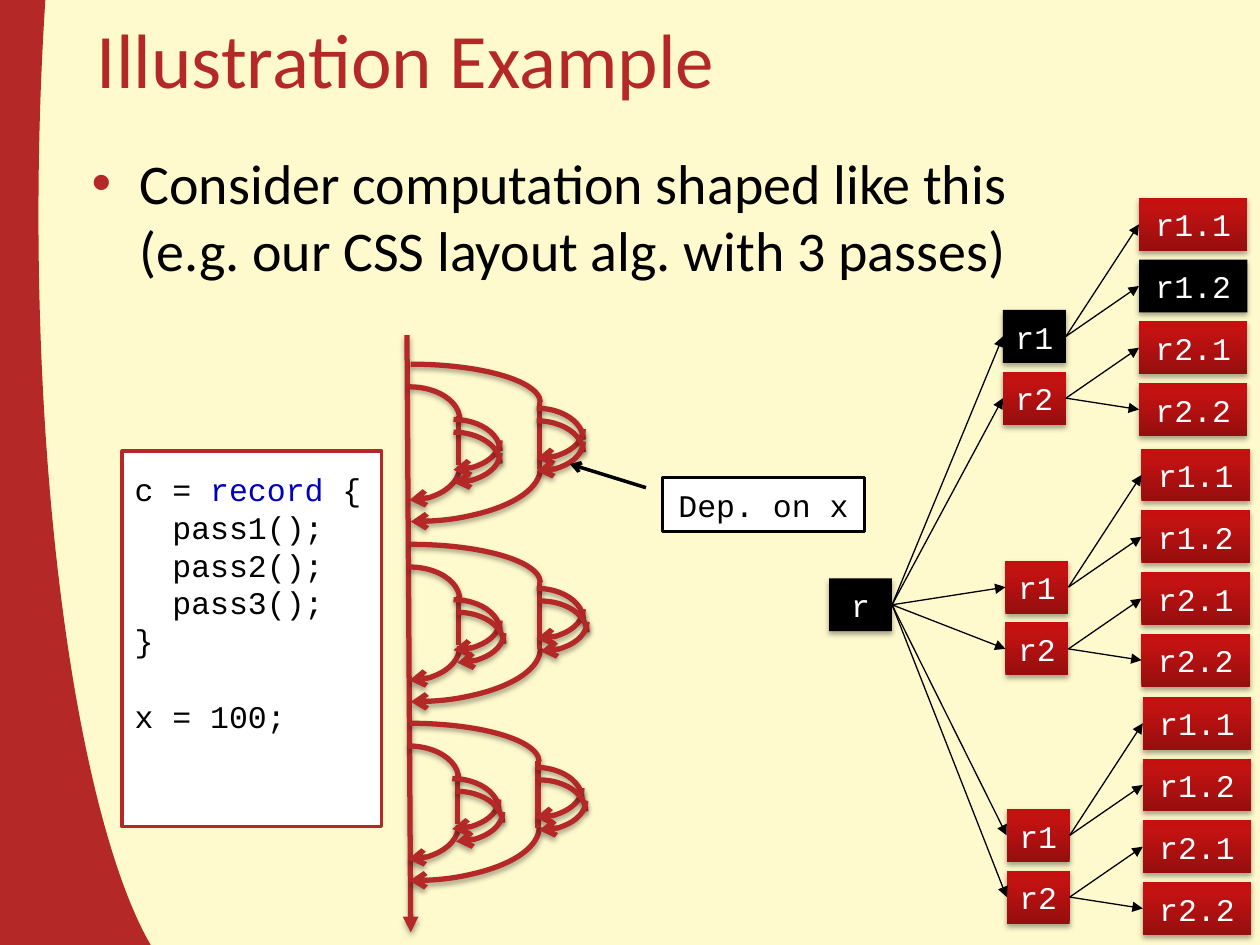
from lxml import etree
from pptx import Presentation
from pptx.dml.color import RGBColor
from pptx.enum.shapes import MSO_CONNECTOR, MSO_SHAPE
from pptx.enum.text import MSO_ANCHOR, PP_ALIGN
from pptx.oxml.ns import qn
from pptx.util import Inches, Pt

ARC, RECTANGLE, CALLOUT = MSO_SHAPE.ARC, MSO_SHAPE.RECTANGLE, MSO_SHAPE.LINE_CALLOUT_1
STRAIGHT = MSO_CONNECTOR.STRAIGHT
TOP, MIDDLE = MSO_ANCHOR.TOP, MSO_ANCHOR.MIDDLE
LEFT, CENTER = PP_ALIGN.LEFT, PP_ALIGN.CENTER

RED, BLACK, WHITE, CREAM, BLUE = "B42828", "000000", "FFFFFF", "FFFACD", "0000BF"
RED_STOPS = [(0, "960E0E"), (80, "C31212"), (100, "C70F0F")]
SANS, MONO = "Calibri", "Courier New"

NODE_HEIGHT, BRANCH_WIDTH, LEAF_WIDTH = 0.42, 0.5, 0.86
LEAF_OFFSET, LEAF_RISE, NODE_STEP = 1.08, 0.89, 0.49


def color(value):
    return RGBColor.from_string(value)


def add_part(parent, tag, **attributes):
    part = etree.SubElement(parent, qn(tag))
    for name, value in attributes.items():
        part.set(name, str(value))
    return part


def set_effects(shape, shadowed):
    effects = add_part(shape.element.spPr, "a:effectLst")
    if shadowed:
        shadow = add_part(effects, "a:outerShdw", blurRad=Pt(3.1), dist=Pt(1.8),
                          dir=5400000, rotWithShape=0)
        add_part(add_part(shadow, "a:srgbClr", val=BLACK), "a:alpha", val=35000)


def style_line(shape, line_color, width, arrow=None, shadowed=False):
    shape.line.color.rgb = color(line_color)
    shape.line.width = Pt(width)
    if arrow:
        tag, kind = arrow
        add_part(shape.line._get_or_add_ln(), tag, type=kind)
    set_effects(shape, shadowed)


def add_box(shapes, kind, box, fill=None):
    shape = shapes.add_shape(kind, *map(Inches, box))
    if fill:
        shape.fill.solid()
        shape.fill.fore_color.rgb = color(fill)
    else:
        shape.fill.background()
    return shape


def add_line(shapes, start, end, line_color, width, arrow=None, shadowed=False):
    line = shapes.add_connector(STRAIGHT, *map(Inches, start + end))
    style_line(line, line_color, width, arrow, shadowed)


def add_span(para, text, font, size, text_color):
    span = para.add_run()
    span.text = text
    span.font.name = font
    span.font.size = Pt(size)
    span.font.color.rgb = color(text_color)


def add_label(shape, text, text_color):
    frame = shape.text_frame
    frame.vertical_anchor = MIDDLE
    frame.word_wrap = False
    para = frame.paragraphs[0]
    para.alignment = CENTER
    add_span(para, text, MONO, 18, text_color)


def add_edge_band(page, box):
    band = add_box(page.shapes, ARC, box)
    band.adjustments[0] = 177.665
    band.adjustments[1] = 55.34
    band.element.spPr.get_or_add_xfrm().set("flipH", "1")
    style_line(band, RED, 80)


def add_title(page, box):
    frame = page.shapes.add_textbox(*map(Inches, box)).text_frame
    frame.word_wrap = True
    frame.vertical_anchor = MIDDLE
    add_span(frame.paragraphs[0], "Illustration Example", SANS, 44, RED)


def add_body(page, box):
    frame = page.shapes.add_textbox(*map(Inches, box)).text_frame
    frame.word_wrap = True
    para = frame.paragraphs[0]
    add_span(para, "Consider computation shaped like this", SANS, 32, BLACK)
    para.add_line_break()
    add_span(para, "(e.g. our CSS layout alg. with 3 passes)", SANS, 32, BLACK)
    props = para._p.get_or_add_pPr()
    props.set("marL", str(Inches(0.38)))
    props.set("indent", str(-Inches(0.38)))
    add_part(add_part(props, "a:buClr"), "a:srgbClr", val=RED)
    add_part(props, "a:buFont", typeface="Arial")
    add_part(props, "a:buChar", char="•")


def add_code(page, box):
    shape = add_box(page.shapes, RECTANGLE, box, WHITE)
    style_line(shape, RED, 2)
    frame = shape.text_frame
    frame.vertical_anchor = TOP
    frame.margin_top = Inches(0.15)
    lines = [
        (0, 0, [("c = ", BLACK), ("record", BLUE), (" {", BLACK)]),
        (0.3, 0, [("pass1();", BLACK)]),
        (0.3, 0, [("pass2();", BLACK)]),
        (0.3, 0, [("pass3();", BLACK)]),
        (0, 0, [("}", BLACK)]),
        (0, 21.5, [("x = 100;", BLACK)]),
    ]
    for index, (indent, gap, spans) in enumerate(lines):
        para = frame.add_paragraph() if index else frame.paragraphs[0]
        para.alignment = LEFT
        para.space_before = Pt(gap)
        para._p.get_or_add_pPr().set("marL", str(Inches(indent)))
        for text, text_color in spans:
            add_span(para, text, MONO, 18, text_color)


def add_node(page, box, text, active):
    node = add_box(page.shapes, RECTANGLE, box, BLACK)
    if not active:
        node.fill.gradient()
        gradient = node.element.spPr.find(qn("a:gradFill"))
        stops = gradient.find(qn("a:gsLst"))
        stops.clear()
        for position, value in RED_STOPS:
            stop = add_part(stops, "a:gs", pos=position * 1000)
            add_part(stop, "a:srgbClr", val=value)
        node.fill.gradient_angle = 90
    node.line.fill.background()
    set_effects(node, True)
    add_label(node, text, WHITE)


def add_edge(page, start, end):
    add_line(page.shapes, start, end, BLACK, 0.75, ("a:tailEnd", "triangle"))


def add_subtree(page, left, top, root_end, active):
    middle = NODE_HEIGHT / 2
    for branch in range(2):
        name = f"r{branch + 1}"
        branch_top = top + branch * NODE_STEP
        add_node(page, (left, branch_top, BRANCH_WIDTH, NODE_HEIGHT), name, name in active)
        add_edge(page, root_end, (left, branch_top + middle))
        for leaf in range(2):
            leaf_name = f"{name}.{leaf + 1}"
            leaf_left = left + LEAF_OFFSET
            leaf_top = top - LEAF_RISE + (2 * branch + leaf) * NODE_STEP
            add_node(page, (leaf_left, leaf_top, LEAF_WIDTH, NODE_HEIGHT),
                     leaf_name, leaf_name in active)
            add_edge(page, (left + BRANCH_WIDTH, branch_top + middle),
                     (leaf_left, leaf_top + middle))


def add_tree(page, box):
    left, top, width, height = box
    add_node(page, box, "r", True)
    root_end = (left + width, top + height / 2)
    subtrees = [(7.96, 2.46, {"r1", "r1.2"}), (7.98, 4.45, set()), (7.99, 6.42, set())]
    for subtree_left, subtree_top, active in subtrees:
        add_subtree(page, subtree_left, subtree_top, root_end, active)


def add_arc(shapes, box, returning=False):
    arc = add_box(shapes, ARC, box)
    if returning:
        arc.element.spPr.get_or_add_xfrm().set("flipV", "1")
    style_line(arc, RED, 3, ("a:headEnd", "arrow") if returning else None, True)


def add_pass(page, left, top, inner_shift):
    shapes = page.shapes.add_group_shape().shapes
    for x, y, width, height, returning in [
        (0, 0, 2.06, 0.61, False), (0.62, 0.18, 0.8, 0.52, False),
        (0.62, 0.54, 0.8, 0.54, True), (0, 0.4, 2.06, 0.85, True),
    ]:
        add_arc(shapes, (left + x, top + y, width, height), returning)
    for x, start, end in [(2.05, 0.3, 0.83), (1.41, 0.41, 0.8)]:
        add_line(shapes, (left + x, top + start), (left + x, top + end), RED, 3, shadowed=True)
    for shift, drop in [(0, 0), (inner_shift, 0.1)]:
        for x, y in [(1.66, 0.28), (1, 0.37)]:
            loop_left, loop_top = left + x + shift, top + y + drop
            add_arc(shapes, (loop_left, loop_top + 0.07, 0.74, 0.5))
            add_arc(shapes, (loop_left, loop_top, 0.74, 0.47), True)


def add_timeline(page, start, end):
    add_line(page.shapes, start, end, RED, 3, ("a:tailEnd", "triangle"), True)
    for left, top, inner_shift in [(2.23, 2.89, 0), (2.23, 4.32, 0.03), (2.22, 5.74, 0.03)]:
        add_pass(page, left, top, inner_shift)


def add_callout(page, box):
    callout = add_box(page.shapes, CALLOUT, box, WHITE)
    for index, value in enumerate([0.188, -0.083, -0.249, -0.46]):
        callout.adjustments[index] = value
    style_line(callout, BLACK, 2, ("a:tailEnd", "arrow"))
    add_label(callout, "Dep. on x", BLACK)


def main():
    deck = Presentation()
    deck.slide_width, deck.slide_height = Inches(10), Inches(7.5)
    page = deck.slides.add_slide(deck.slide_layouts[6])
    page.background.fill.solid()
    page.background.fill.fore_color.rgb = color(CREAM)
    add_edge_band(page, (-0.25, -4.83, 3.08, 13.08))
    add_title(page, (0.67, -0.17, 9, 1.25))
    add_body(page, (0.63, 1.13, 9, 5.6))
    add_code(page, (0.97, 3.58, 2.06, 2.98))
    add_tree(page, (6.58, 4.59, BRANCH_WIDTH, NODE_HEIGHT))
    add_timeline(page, (3.23, 2.66), (3.26, 7.4))
    add_callout(page, (5.26, 3.79, 1.6, 0.43))
    deck.save("out.pptx")


if __name__ == "__main__":
    main()
